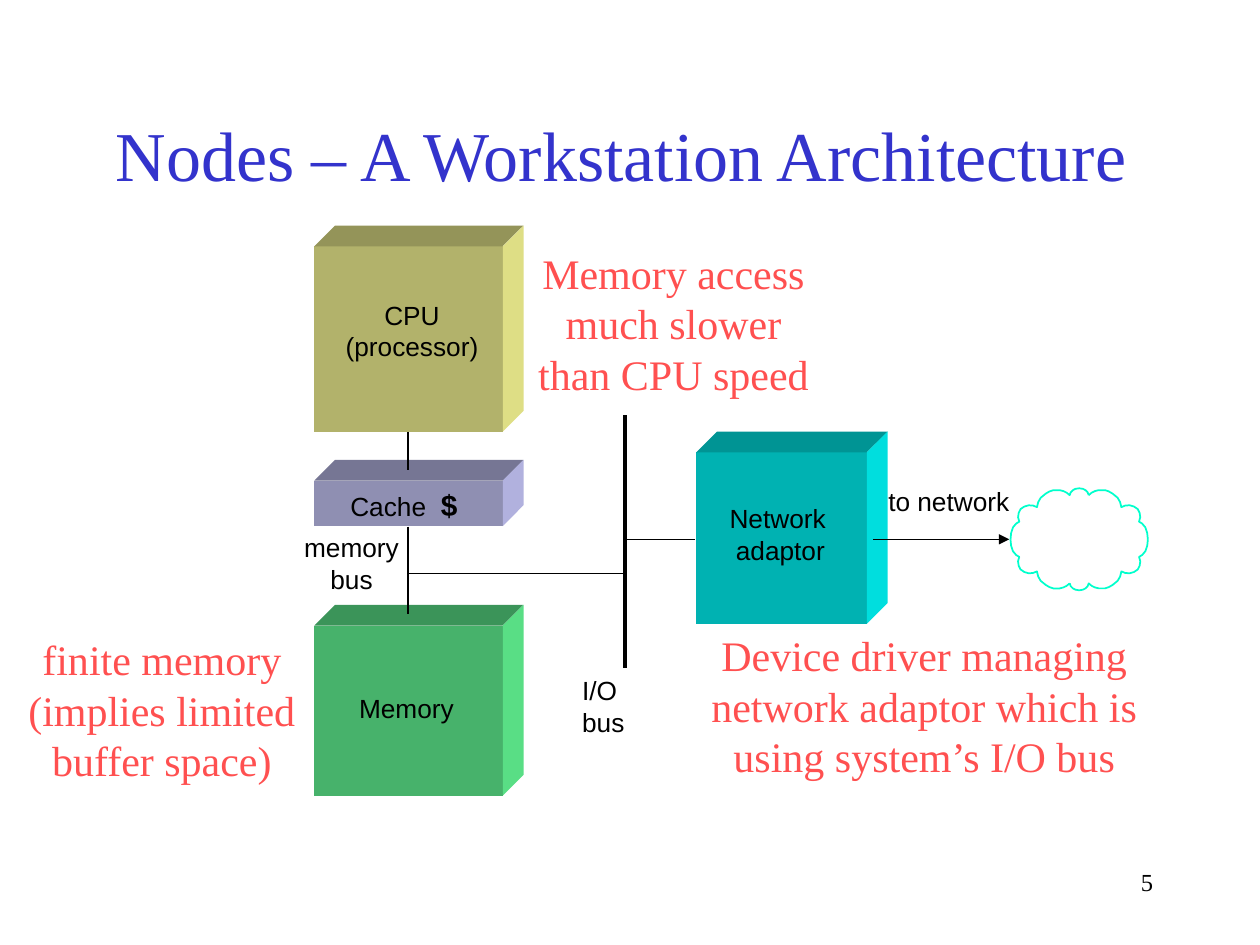
from dataclasses import dataclass

from lxml import etree
from pptx import Presentation
from pptx import util as u
from pptx.dml.color import RGBColor
from pptx.enum import shapes, text
from pptx.oxml.ns import qn


@dataclass(frozen=True)
class Theme:
    ink: str = "000000"
    title: str = "3333CC"
    note: str = "FF5050"
    cloud: str = "00FFCC"
    cpu: str = "FFFF99"
    cache: str = "CCCCFF"
    memory: str = "66FF99"
    net: str = "00FFFF"
    serif: str = "Times New Roman"
    sans: str = "Arial"


T = Theme()
TITLE = dict(name=T.serif, size=u.Pt(40), color=T.title)
NOTE = dict(name=T.serif, size=u.Pt(24), color=T.note)
LABEL = dict(name=T.sans, size=u.Pt(15), color=T.ink)
PAGE = dict(name=T.serif, size=u.Pt(14), color=T.ink)
CASH = dict(LABEL, size=u.Pt(17), bold=True)

CELL = u.Inches(0.25)  # the slide is a grid of 40 columns by 30 rows
DEPTH = 0.66
LEFT, MID, RIGHT = text.PP_ALIGN.LEFT, text.PP_ALIGN.CENTER, text.PP_ALIGN.RIGHT


def cells(*nums):
    return [round(n * CELL) for n in nums]


def tint(code, share=1.0):
    return RGBColor(*(round(c * share) for c in RGBColor.from_string(code)))


def style(font, form):
    for key, value in form.items():
        if key == "color":
            font.color.rgb = tint(value)
        else:
            setattr(font, key, value)


def fill_text(frame, lines, form, align):
    """Each line is a string or a list of (string, format) runs."""
    for i, line in enumerate(lines):
        para = frame.paragraphs[0] if i == 0 else frame.add_paragraph()
        para.alignment = align
        for words, look in [(line, form)] if isinstance(line, str) else line:
            run = para.add_run()
            run.text = words
            style(run.font, look)


def add_text(slide, spot, lines, form, align=LEFT, wrap=False, pad=True):
    frame = slide.shapes.add_textbox(*cells(*spot)).text_frame
    frame.word_wrap = wrap
    if not pad:
        for side in ("left", "top", "right", "bottom"):
            setattr(frame, f"margin_{side}", 0)
    fill_text(frame, lines, form, align)


def add_shape(slide, points, close=True):
    first, *rest = [cells(*p) for p in points]
    pen = slide.shapes.build_freeform(*first)
    pen.add_line_segments(rest, close=close)
    shape = pen.convert_to_shape()
    shape.shadow.inherit = False
    return shape


def add_block(slide, x, y, w, h, color):
    """Draw a box seen from the upper right: front, top and side."""
    r, b, d = x + w, y + h, DEPTH
    faces = [
        (0.7, [(x, y), (r, y), (r, b), (x, b)]),
        (0.58, [(x, y), (x + d, y - d), (r + d, y - d), (r, y)]),
        (0.87, [(r, y), (r + d, y - d), (r + d, b - d), (r, b)]),
    ]
    for share, points in faces:
        face = add_shape(slide, points)
        face.fill.solid()
        face.fill.fore_color.rgb = tint(color, share)
        face.line.fill.background()


def add_line(slide, ends, width=0.88, arrow=False):
    line = slide.shapes.add_connector(shapes.MSO_CONNECTOR.STRAIGHT, *cells(*ends))
    line.line.color.rgb = tint(T.ink)
    line.line.width = u.Pt(width)
    if arrow:
        etree.SubElement(line.line._get_or_add_ln(), qn("a:tailEnd"), type="triangle")
    etree.SubElement(line._element.spPr, qn("a:effectLst"))


def add_cloud(slide, cx, cy):
    """Draw two arcs of the upper half, then both turned half round."""
    bump = [(0, -1.62), (0.12, -1.6), (0.2, -1.56), (0.27, -1.49), (0.3, -1.4)]
    side = [
        (0.3, -1.4), (0.4, -1.48), (0.5, -1.53), (0.62, -1.56), (0.82, -1.56),
        (0.94, -1.52), (1.06, -1.45), (1.22, -1.32), (1.3, -1.18),
        (1.34, -1.02), (1.46, -1.07), (1.6, -1.08), (1.74, -1.04),
        (1.86, -0.96), (1.92, -0.84), (1.94, -0.7), (1.9, -0.56),
        (2.0, -0.5), (2.1, -0.38), (2.16, -0.2), (2.18, 0),
    ]
    left = [(-x, y) for x, y in (bump + side[1:])[::-1]] + bump[1:]
    for turn in (1, -1):
        for arc in (side, left):
            points = [(cx + turn * x, cy + turn * y) for x, y in arc]
            edge = add_shape(slide, points, close=False)
            edge.fill.background()
            edge.line.color.rgb = tint(T.cloud)
            edge.line.width = u.Pt(1)


def add_title(slide, words):
    title = slide.shapes.title
    title.left, title.top, title.width, title.height = cells(3, 2.68, 34, 4.4)
    title.text_frame.vertical_anchor = text.MSO_ANCHOR.MIDDLE
    fill_text(title.text_frame, [words], TITLE, MID)


def main():
    deck = Presentation()
    deck.slide_width, deck.slide_height = cells(40, 30)
    slide = deck.slides.add_slide(deck.slide_layouts[5])
    add_title(slide, "Nodes – A Workstation Architecture ")

    for block in (
        (9.98, 15.26, 5.98, 1.44, T.cache),
        (9.98, 7.82, 5.98, 5.88, T.cpu),
        (9.98, 19.86, 5.98, 5.4, T.memory),
        (22.1, 14.36, 5.42, 5.44, T.net),
    ):
        add_block(slide, *block)

    stem, bus, net = 12.96, 19.84, 17.12
    add_line(slide, (stem, 18.2, bus, 18.2))
    add_line(slide, (bus, 21.2, bus, 13.16), width=1.88)
    add_line(slide, (stem, 13.72, stem, 14.92))
    add_line(slide, (stem, 16.72, stem, 19.48))
    add_line(slide, (bus, net, 22.08, net))
    add_line(slide, (27.72, net, 32.04, net), arrow=True)

    for spot, lines, align in (
        ((10.96, 9.5, 4.24, 2), ["CPU", "(processor)"], MID),
        ((11.12, 15.44, 3.4, 1.12), [[("Cache  ", LABEL), ("$", CASH)]], LEFT),
        ((11.4, 21.98, 3.2, 1), ["Memory"], LEFT),
        ((18.48, 21.42, 1.4, 2), ["I/O", "bus"], LEFT),
        ((23.16, 15.94, 3.08, 1), ["Network"], LEFT),
        ((23.36, 16.96, 2.84, 1), ["adaptor"], LEFT),
        ((28.2, 15.4, 4, 1), ["to network"], LEFT),
        ((9.52, 16.88, 3.28, 2), ["memory", "bus"], MID),
    ):
        add_text(slide, spot, lines, LABEL, align, pad=False)

    for spot, words in (
        ((0.24, 19.92, 9.8, 5.2), "finite memory (implies limited buffer space)"),
        ((22.12, 19.8, 14.44, 5.2),
         "Device driver managing network adaptor which is using system’s I/O bus"),
        ((16.4, 7.66, 9.96, 5.2), "Memory access much slower than CPU speed"),
    ):
        add_text(slide, spot, [words], NOTE, MID, wrap=True)

    add_cloud(slide, 34.26, net)
    add_text(slide, (28.68, 27.32, 8.32, 2), ["5"], PAGE, RIGHT, wrap=True)
    deck.save("out.pptx")


if __name__ == "__main__":
    main()
